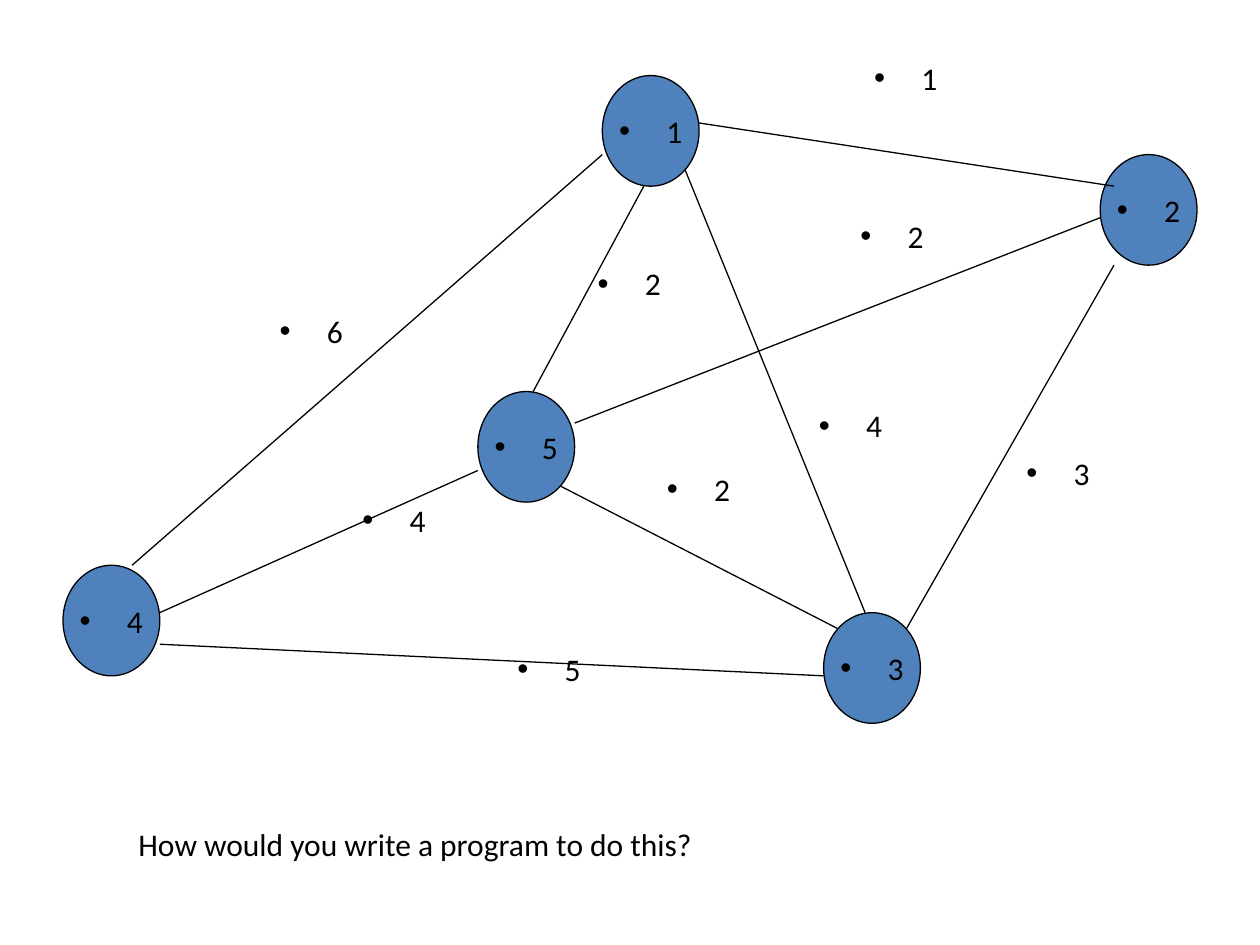
from dataclasses import dataclass, field
from lxml.etree import SubElement
from pptx import Presentation
from pptx.dml.color import RGBColor
from pptx.enum.shapes import MSO_CONNECTOR as Connector, MSO_SHAPE as Preset
from pptx.enum.text import MSO_ANCHOR as Anchor, MSO_AUTO_SIZE as AutoSize, PP_ALIGN as Align
from pptx.oxml.ns import qn
from pptx.util import Inches, Pt

COLORS = {"node": "4F81BD", "ink": "000000"}
NODES = {"4": (0, 31), "2": (75, 5), "5": (30, 20), "3": (55, 34), "1": (39, 0)}
EDGES = [
    ((5, 31), (39, 5)),
    ((7, 34), (30, 25)),
    ((7, 36), (55, 38)),
    ((37, 22), (75, 9)),
    ((61, 35), (76, 12)),
    ((46, 3), (76, 7)),
    ((36, 26), (56, 35)),
    ((34, 20), (42, 7)),
    ((45, 6), (58, 34)),
]
WEIGHTS = [
    ("6", 15, 15),
    ("4", 21, 27),
    ("5", 32.2, 36.4),
    ("1", 58, -1),
    ("3", 69, 24),
    ("2", 57, 9),
    ("2", 43, 25),
    ("2", 38, 12),
    ("4", 54, 21),
]


def color(name):
    return RGBColor.from_string(COLORS[name])


def write_text(shape, text, font="Calibri", size=18, align=Align.LEFT, anchor=Anchor.TOP, bullet=True):
    frame = shape.text_frame
    frame.word_wrap = False
    frame.vertical_anchor = anchor
    paragraph = frame.paragraphs[0]
    paragraph.alignment = align
    run = paragraph.add_run()
    run.text = text
    run.font.name = font
    run.font.size = Pt(size)
    run.font.color.rgb = color("ink")
    if bullet:
        properties = paragraph._p.get_or_add_pPr()
        indent = Inches(0.375)
        properties.set("marL", str(indent))
        properties.set("indent", str(-indent))
        SubElement(properties, qn("a:buFont"), typeface="Arial")
        SubElement(properties, qn("a:buChar"), char="•")


@dataclass
class GraphSlide:
    """Draws a weighted graph on a grid of 82 columns and 41 rows."""

    slide: object
    left: float = 0.5
    top: float = 0.6
    column: float = field(default=9 / 82)
    row: float = field(default=5.14 / 41)
    line_width: float = 0.75

    def point(self, column, row):
        return Inches(self.left + column * self.column), Inches(self.top + row * self.row)

    def style_line(self, line):
        line.color.rgb = color("ink")
        line.width = Pt(self.line_width)

    def node(self, text, column, row, span=7):
        size = Inches(span * self.column), Inches(span * self.row)
        shape = self.slide.shapes.add_shape(Preset.OVAL, *self.point(column, row), *size)
        shape.shadow.inherit = False
        shape.fill.solid()
        shape.fill.fore_color.rgb = color("node")
        self.style_line(shape.line)
        write_text(shape, text, align=Align.CENTER, anchor=Anchor.MIDDLE)

    def edge(self, start, end):
        connector = self.slide.shapes.add_connector(
            Connector.STRAIGHT, *self.point(*start), *self.point(*end))
        self.style_line(connector.line)
        SubElement(connector._element.spPr, qn("a:effectLst"))

    def label(self, text, position, width, height, **text_format):
        shape = self.slide.shapes.add_textbox(*position, Inches(width), Inches(height))
        write_text(shape, text, **text_format)
        shape.text_frame.auto_size = AutoSize.SHAPE_TO_FIT_TEXT

    def weight(self, text, column, row):
        self.label(text, self.point(column - 0.24, row - 0.45), 0.48, 0.75)


def main():
    presentation = Presentation()
    presentation.slide_width, presentation.slide_height = Inches(10), Inches(7.5)
    graph = GraphSlide(presentation.slides.add_slide(presentation.slide_layouts[6]))
    for text, cell in NODES.items():
        graph.node(text, *cell)
    for start, end in EDGES:
        graph.edge(start, end)
    for weight in WEIGHTS:
        graph.weight(*weight)
    graph.label("How would you write a program to do this?",
                (Inches(1), Inches(6.5)), 4.65, 0.4, bullet=False)
    presentation.save("out.pptx")


if __name__ == "__main__":
    main()
